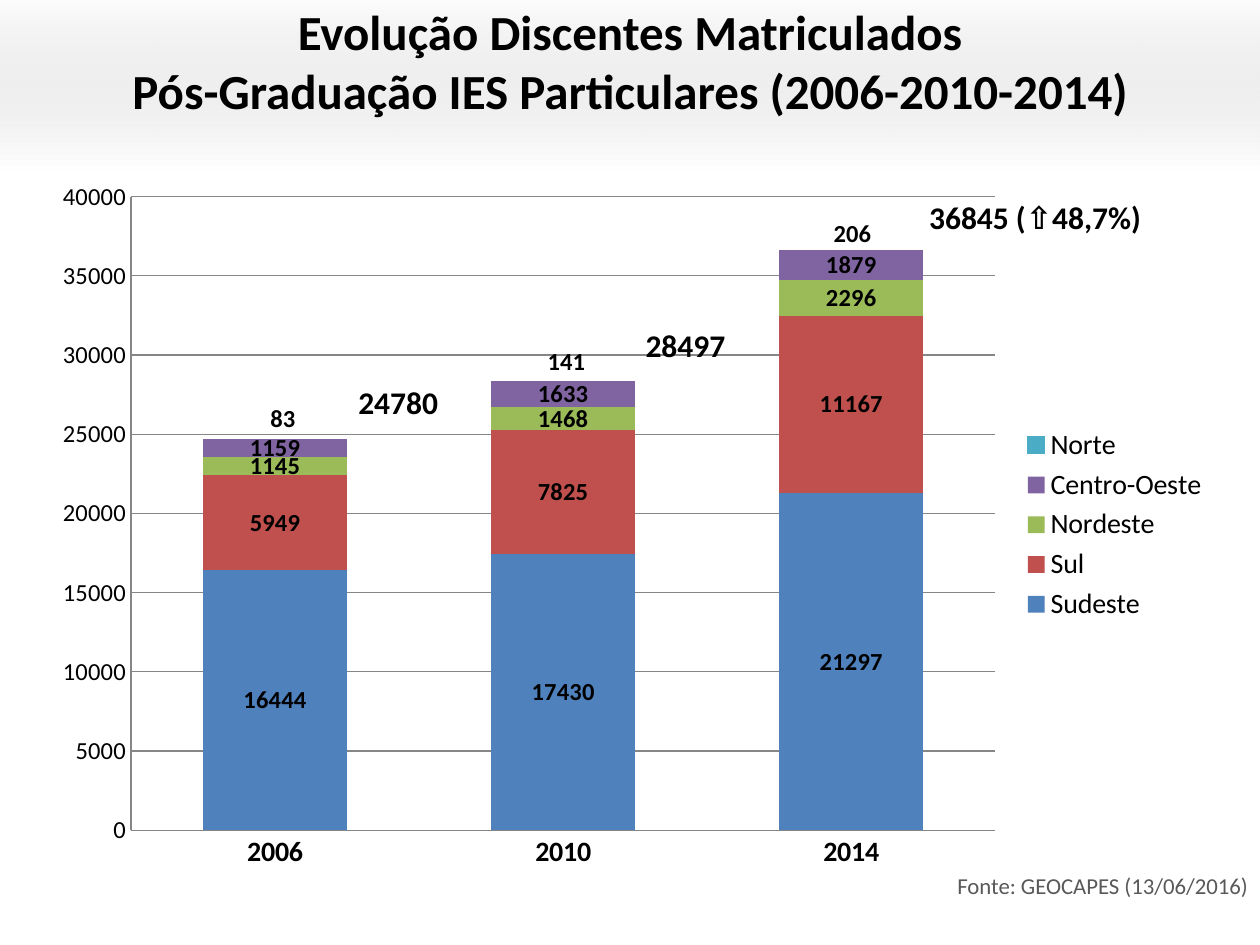
from lxml import etree
from pptx import Presentation
from pptx.chart.data import CategoryChartData
from pptx.dml.color import RGBColor
from pptx.enum.chart import XL_CHART_TYPE, XL_LEGEND_POSITION, XL_TICK_MARK
from pptx.enum.shapes import MSO_SHAPE
from pptx.enum.text import MSO_ANCHOR, PP_ALIGN
from pptx.oxml import parse_xml
from pptx.oxml.ns import nsdecls, qn
from pptx.util import Inches, Pt

STACKED = XL_CHART_TYPE.COLUMN_STACKED
LEGEND_RIGHT = XL_LEGEND_POSITION.RIGHT
NO_TICK = XL_TICK_MARK.NONE
RECTANGLE = MSO_SHAPE.RECTANGLE
TOP, MIDDLE = MSO_ANCHOR.TOP, MSO_ANCHOR.MIDDLE
CENTER, RIGHT = PP_ALIGN.CENTER, PP_ALIGN.RIGHT

FONT = "Calibri"
BLACK = RGBColor(0x00, 0x00, 0x00)
WHITE = RGBColor(0xFF, 0xFF, 0xFF)
BAND_GRAY = RGBColor(0xBF, 0xBF, 0xBF)
GRID_GRAY = RGBColor(0x86, 0x86, 0x86)
SOURCE_GRAY = RGBColor(0x59, 0x59, 0x59)

YEARS = ["2006", "2010", "2014"]
# Norte is rounded to the scale of the axis
REGIONS = [
    ("Sudeste", (16444, 17430, 21297), RGBColor(0x4F, 0x81, 0xBD)),
    ("Sul", (5949, 7825, 11167), RGBColor(0xC0, 0x50, 0x4D)),
    ("Nordeste", (1145, 1468, 2296), RGBColor(0x9B, 0xBB, 0x59)),
    ("Centro-Oeste", (1159, 1633, 1879), RGBColor(0x80, 0x64, 0xA2)),
    ("Norte", (0, 0, 0), RGBColor(0x4B, 0xAC, 0xC6)),
]
# Text, size and box of the figures written above the columns
COLUMN_NOTES = [
    ("83", 14, (2.01, 3.15, 0.47, 0.31)),
    ("141", 14, (4.14, 2.7, 0.71, 0.31)),
    ("206", 14, (6.45, 1.68, 0.63, 0.31)),
    ("24780", 18, (2.72, 2.99, 0.88, 0.31)),
    ("28497", 18, (5, 2.54, 0.88, 0.31)),
    ("36845 (⇧48,7%)", 18, (7.24, 1.52, 1.95, 0.31)),
]


def set_font(font, size, bold=False, color=BLACK):
    font.name = FONT
    font.size = Pt(size)
    font.bold = bold
    font.color.rgb = color


def write_text(shape, text, size, bold=True, color=BLACK, align=CENTER,
               anchor=TOP, line_spacing=None, space_after=None):
    frame = shape.text_frame
    frame.word_wrap = True
    frame.vertical_anchor = anchor
    frame.text = text
    for paragraph in frame.paragraphs:
        paragraph.alignment = align
        paragraph.line_spacing = line_spacing
        paragraph.space_after = space_after
        for run in paragraph.runs:
            set_font(run.font, size, bold, color)


def add_text(slide, box, text, size, **text_format):
    shape = slide.shapes.add_textbox(*map(Inches, box))
    write_text(shape, text, size, **text_format)


def add_header_band(slide, box):
    band = slide.shapes.add_shape(RECTANGLE, *map(Inches, box))
    band.shadow.inherit = False
    band.line.fill.background()
    band.fill.gradient()
    band.fill.gradient_angle = 270
    for stop, color, position in zip(band.fill.gradient_stops, (BAND_GRAY, WHITE), (0, 1)):
        stop.color.rgb = color
        stop.position = position
    # The gray end is fully transparent
    gray = band.element.spPr.find(".//" + qn("a:srgbClr"))
    etree.SubElement(gray, qn("a:alpha")).set("val", "0")


def place_title(slide, box):
    title = slide.shapes.title
    title.left, title.top, title.width, title.height = map(Inches, box)
    write_text(title, "Evolução Discentes Matriculados\n"
               "Pós-Graduação IES Particulares (2006-2010-2014)", 28, anchor=MIDDLE)
    # Bring the title in front of the band
    slide.shapes.element.append(title.element)


def set_plot_area(chart, chart_box, plot_box):
    """Place the inner plot; both boxes are in inches on the slide."""
    left, top, width, height = chart_box
    plot_left, plot_top, plot_width, plot_height = plot_box
    plot_area = chart.element.chart.plotArea
    for old_layout in plot_area.findall(qn("c:layout")):
        plot_area.remove(old_layout)
    plot_area.insert(0, parse_xml(
        f'<c:layout {nsdecls("c")}><c:manualLayout><c:layoutTarget val="inner"/>'
        '<c:xMode val="edge"/><c:yMode val="edge"/>'
        f'<c:x val="{(plot_left - left) / width}"/><c:y val="{(plot_top - top) / height}"/>'
        f'<c:w val="{plot_width / width}"/><c:h val="{plot_height / height}"/>'
        '</c:manualLayout></c:layout>'))


def format_axis(axis, size, bold):
    axis.major_tick_mark = axis.minor_tick_mark = NO_TICK
    axis.format.line.color.rgb = GRID_GRAY
    set_font(axis.tick_labels.font, size, bold)


def add_enrolment_chart(slide, box):
    data = CategoryChartData()
    data.categories = YEARS
    for name, values, _ in REGIONS:
        data.add_series(name, values)
    chart = slide.shapes.add_chart(STACKED, *map(Inches, box), data).chart
    chart.has_title = False
    set_font(chart.font, 10)
    set_plot_area(chart, box, (1.04, 1.56, 6.86, 5.03))

    # Columns; Norte is only a thin cap without labels
    plot = chart.plots[0]
    plot.gap_width = plot.overlap = 100
    plot.vary_by_categories = False
    for series, (name, _, color) in zip(plot.series, REGIONS):
        series.format.fill.solid()
        series.format.fill.fore_color.rgb = color
        if name == "Norte":
            series.format.line.color.rgb = color
            series.format.line.width = Pt(1.5)
        else:
            series.data_labels.show_value = True
            set_font(series.data_labels.font, 14, bold=True)

    # Axes
    format_axis(chart.category_axis, 16, bold=True)
    value_axis = chart.value_axis
    format_axis(value_axis, 14, bold=False)
    value_axis.minimum_scale, value_axis.maximum_scale = 0, 40000
    value_axis.major_unit = 5000
    value_axis.has_major_gridlines = True
    value_axis.major_gridlines.format.line.color.rgb = GRID_GRAY

    # Legend
    chart.has_legend = True
    chart.legend.position = LEGEND_RIGHT
    chart.legend.include_in_layout = False
    set_font(chart.legend.font, 16)


def add_column_notes(slide):
    for text, size, box in COLUMN_NOTES:
        add_text(slide, box, text, size)


def main():
    presentation = Presentation()
    presentation.slide_width, presentation.slide_height = Inches(10), Inches(7.5)
    slide = presentation.slides.add_slide(presentation.slide_layouts[5])
    add_header_band(slide, (0, -0.04, 10, 1.39))
    add_enrolment_chart(slide, (0.31, 1.32, 9.38, 5.69))
    place_title(slide, (0, -0.03, 10, 1.02))
    add_column_notes(slide)
    # Source line
    add_text(slide, (7.4, 6.83, 2.6, 0.39), "Fonte: GEOCAPES (13/06/2016)", 13, bold=False,
             color=SOURCE_GRAY, align=RIGHT, line_spacing=1.2, space_after=Pt(6))
    presentation.save("out.pptx")


if __name__ == "__main__":
    main()
